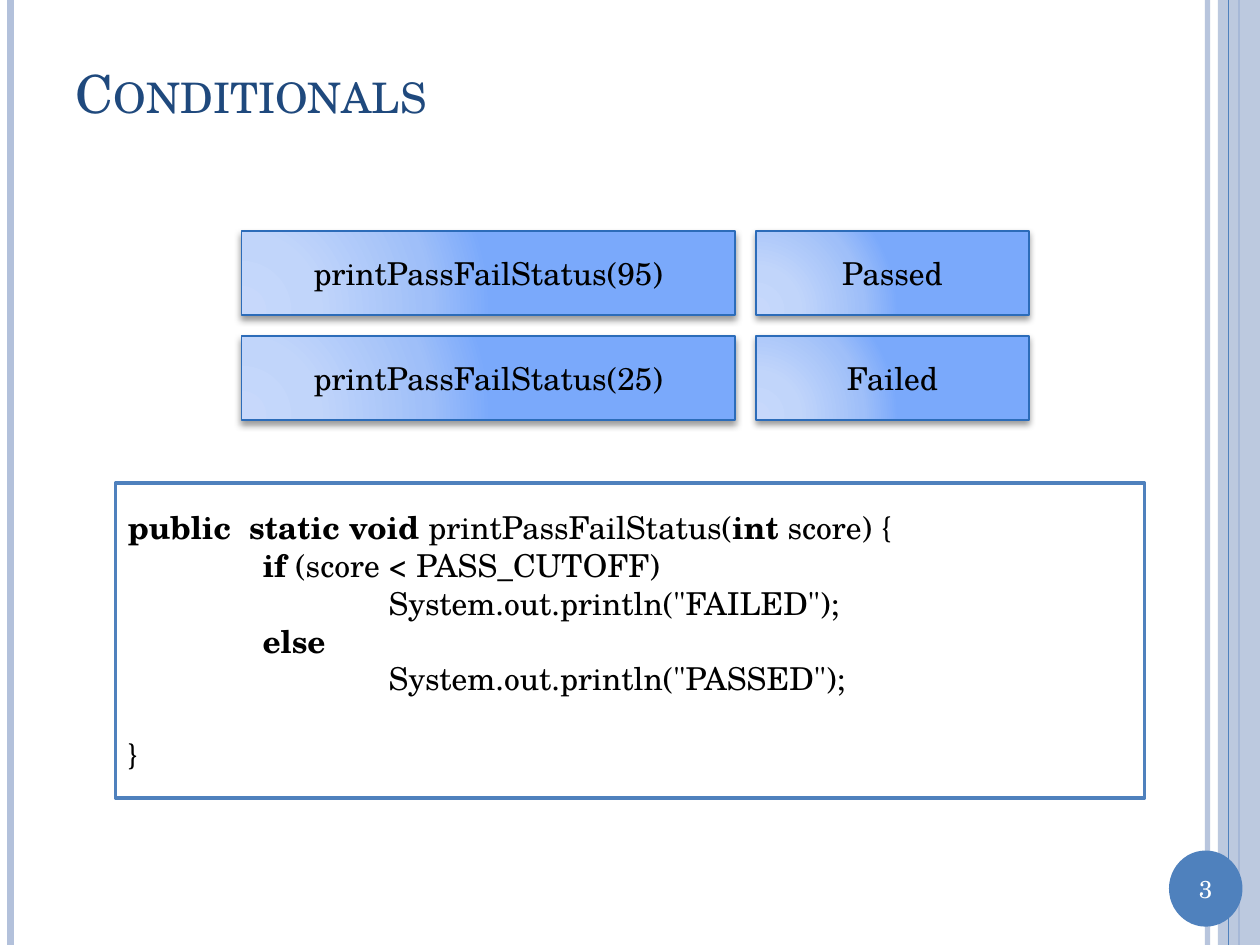
from lxml import etree
from pptx import Presentation
from pptx.dml.color import RGBColor
from pptx.enum.shapes import MSO_CONNECTOR, MSO_SHAPE
from pptx.enum.text import MSO_ANCHOR, PP_ALIGN
from pptx.oxml.ns import qn
from pptx.util import Pt

STRAIGHT = MSO_CONNECTOR.STRAIGHT
RECTANGLE, OVAL = MSO_SHAPE.RECTANGLE, MSO_SHAPE.OVAL
MIDDLE = MSO_ANCHOR.MIDDLE
LEFT, CENTER = PP_ALIGN.LEFT, PP_ALIGN.CENTER

WIDTH, HEIGHT = 720, 540
FONT = "TeX Gyre Schola"
BLUE, PALE, NAVY = "4F81BD", "B3C1DB", "1F497D"
BLACK, WHITE, EDGE = "000000", "FFFFFF", "2C6CB9"
GRADIENT = [(0, "C7D8FB"), (30, "C1D5FA"), (75, "9FBFF9"), (100, "7AA9FB")]
LINE_PITCH = 21.5

CALLS = [("printPassFailStatus(95)", "Passed"),
         ("printPassFailStatus(25)", "Failed")]
CODE = [
    (0, 0, [("public  static void ", True), ("printPassFailStatus(", False),
            ("int", True), (" score) {", False)]),
    (77, 0, [("if", True), (" (score < PASS_CUTOFF)", False)]),
    (149, 0, [('System.out.println("FAILED");', False)]),
    (77, 0, [("else", True)]),
    (149, 0, [('System.out.println("PASSED");', False)]),
    (0, LINE_PITCH, [("}", False)]),
]


def rgb(value):
    return RGBColor.from_string(value)


def add_child(parent, tag, **attributes):
    child = etree.SubElement(parent, qn(tag))
    for name, value in attributes.items():
        child.set(name, str(value))
    return child


def set_alpha(element, percent):
    add_child(next(element.iter(qn("a:srgbClr"))), "a:alpha", val=percent * 1000)


def style_run(run, size, color, bold=False):
    run.font.name = FONT
    run.font.size = Pt(size)
    run.font.bold = bold
    run.font.color.rgb = rgb(color)


def write_line(shape, text, size, color, align):
    frame = shape.text_frame
    frame.text = text
    frame.vertical_anchor = MIDDLE
    paragraph = frame.paragraphs[0]
    paragraph.alignment = align
    style_run(paragraph.runs[0], size, color)


def add_box(slide, kind, box, fill=None, line=None, line_width=1):
    shape = slide.shapes.add_shape(kind, *map(Pt, box))
    shape.shadow.inherit = False
    if fill:
        shape.fill.solid()
        shape.fill.fore_color.rgb = rgb(fill)
    if line:
        shape.line.color.rgb = rgb(line)
        shape.line.width = Pt(line_width)
    else:
        shape.line.fill.background()
    return shape


def add_rule(slide, x, color, width):
    rule = slide.shapes.add_connector(STRAIGHT, Pt(x), 0, Pt(x), Pt(HEIGHT))
    rule.line.color.rgb = rgb(color)
    rule.line.width = Pt(width)
    properties = rule._element.spPr
    add_child(properties, "a:effectLst")
    return properties


def add_glossy_box(slide, box, text):
    shape = add_box(slide, RECTANGLE, box, line=EDGE)
    properties = shape._element.spPr
    gradient = etree.Element(qn("a:gradFill"), rotWithShape="1")
    stops = add_child(gradient, "a:gsLst")
    for position, color in GRADIENT:
        stop = add_child(stops, "a:gs", pos=position * 1000)
        add_child(stop, "a:srgbClr", val=color)
    circle = add_child(gradient, "a:path", path="circle")
    add_child(circle, "a:fillToRect", l=5000, t=100000, r=120000, b=10000)
    properties.find(qn("a:ln")).addprevious(gradient)
    shadow = add_child(properties.find(qn("a:effectLst")), "a:outerShdw",
                       blurRad=Pt(4), dist=Pt(2), dir=90 * 60000, rotWithShape=0)
    add_child(shadow, "a:srgbClr", val=BLACK)
    set_alpha(shadow, 40)
    write_line(shape, text, 18, BLACK, CENTER)


def add_frame(slide):
    set_alpha(add_rule(slide, 690, PALE, 3), 93)
    add_rule(slide, 6, PALE, 4.5)
    add_rule(slide, 708, BLUE, 1.5)
    band = add_box(slide, RECTANGLE, (696, 0, 24, HEIGHT), PALE)
    set_alpha(band._element.spPr, 87)
    add_rule(slide, 702, BLUE, 0.75)


def add_page_number(slide, box, number):
    add_box(slide, OVAL, box, BLUE)
    left, top, width, height = box
    label = slide.shapes.add_textbox(Pt(left), Pt(top + 9.5), Pt(width), Pt(24.5))
    label.text_frame.word_wrap = True
    write_line(label, number, 14, WHITE, CENTER)


def add_title(slide, box, text):
    title = slide.shapes.title
    title.left, title.top, title.width, title.height = map(Pt, box)
    write_line(title, text, 30, NAVY, LEFT)
    title.text_frame.paragraphs[0].runs[0].font._element.set("cap", "small")


def add_calls(slide, box):
    left, top, width, height = box
    gap, call_width = 12, 282
    row_height = (height - gap) / 2
    result_left = left + call_width + gap
    result_width = width - call_width - gap
    for row, (call, result) in enumerate(CALLS):
        y = top + row * (row_height + gap)
        add_glossy_box(slide, (left, y, call_width, row_height), call)
        add_glossy_box(slide, (result_left, y, result_width, row_height), result)


def add_code(slide, box):
    frame = add_box(slide, RECTANGLE, box, WHITE, BLUE, 2).text_frame
    frame.word_wrap = True
    frame.vertical_anchor = MIDDLE
    for index, (indent, space, parts) in enumerate(CODE):
        paragraph = frame.add_paragraph() if index else frame.paragraphs[0]
        paragraph.alignment = LEFT
        paragraph.space_before = Pt(space)
        paragraph._p.get_or_add_pPr().set("marL", str(Pt(indent)))
        for text, bold in parts:
            run = paragraph.add_run()
            run.text = text
            style_run(run, 18, BLACK, bold)


def main():
    presentation = Presentation()
    presentation.slide_width, presentation.slide_height = Pt(WIDTH), Pt(HEIGHT)
    slide = presentation.slides.add_slide(presentation.slide_layouts[5])
    add_frame(slide)
    add_page_number(slide, (668, 486, 42, 43.5), "3")
    add_title(slide, (36, 21.5, 624, 62.5), "Conditionals")
    add_code(slide, (66, 276, 588, 180))
    add_calls(slide, (138, 132, 450, 108))
    presentation.save("out.pptx")


if __name__ == "__main__":
    main()
